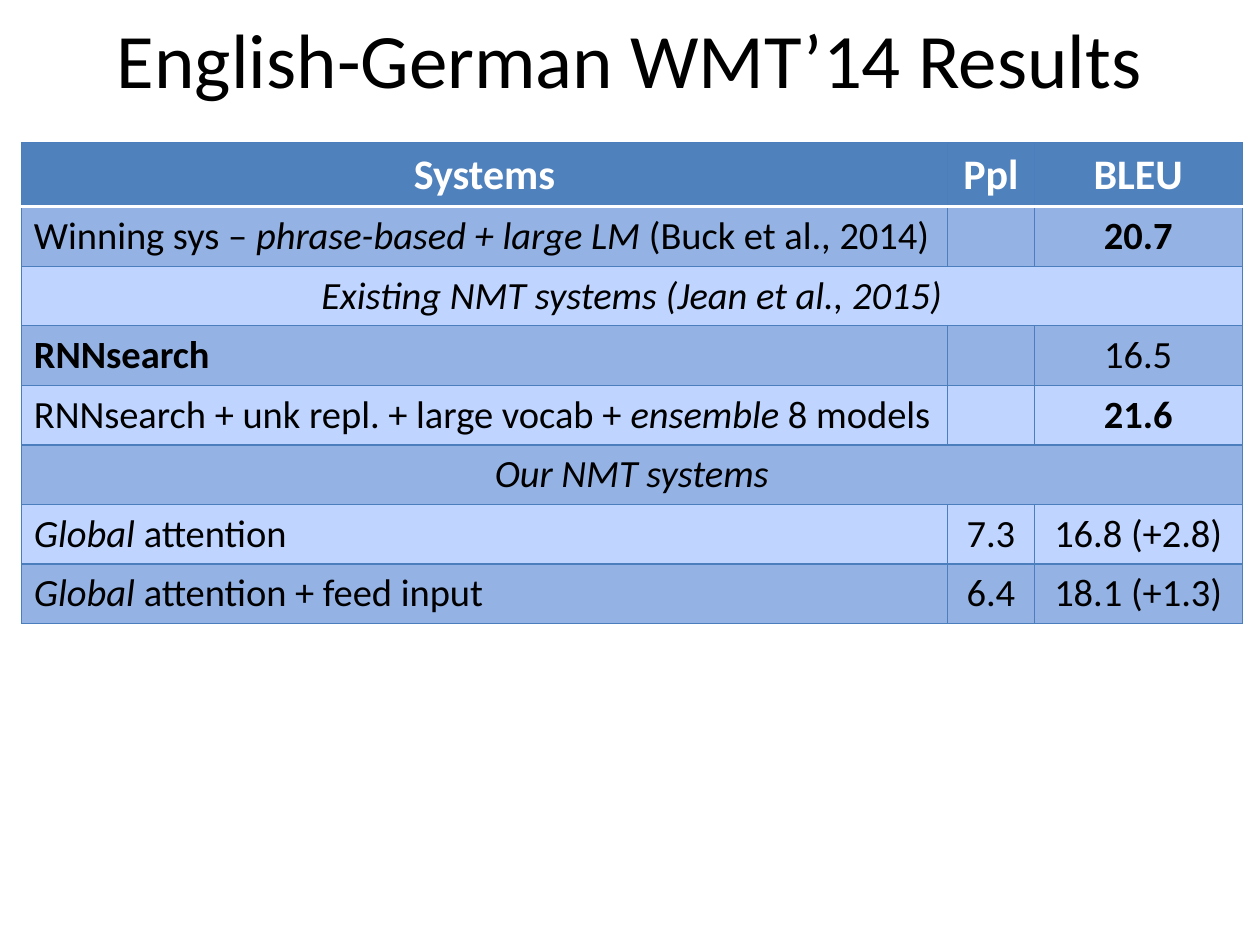
from lxml.etree import SubElement
from pptx import Presentation
from pptx.dml.color import RGBColor
from pptx.enum.text import MSO_ANCHOR as Anchor, PP_ALIGN as Align
from pptx.oxml.ns import qn
from pptx.util import Cm, Pt

TITLE = "English-German WMT’14 Results"
HEAD = ["Systems", "Ppl", "BLEU"]
# Each cell is a list of (text, style) runs: b bold, i italic.
# A row with a single cell spans the whole table.
ROWS = [
    [[("Winning sys – ", ""), ("phrase-based + large LM ", "i"),
      ("(Buck et al., 2014)", "")], [], [("20.7", "b")]],
    [[("Existing NMT systems (Jean et al., 2015)", "i")]],
    [[("RNNsearch", "b")], [], [("16.5", "")]],
    [[("RNNsearch + unk repl. + large vocab + ", ""), ("ensemble", "i"),
      (" 8 models", "")], [], [("21.6", "b")]],
    [[("Our NMT systems", "i")]],
    [[("Global ", "i"), ("attention", "")], [("7.3", "")],
     [("16.8 (+2.8)", "")]],
    [[("Global ", "i"), ("attention + feed input", "")], [("6.4", "")],
     [("18.1 (+1.3)", "")]],
]
WIDTHS = [18.67, 1.75, 4.19]
HEAD_H, ROW_H = 1.29, 1.2
FONT = "Calibri"
BLUE, DARK, LIGHT, EDGE = "4F81BD", "94B2E4", "BFD5FF", "4B7EBC"
BLACK, WHITE = "000000", "FFFFFF"


def color(code):
    return RGBColor.from_string(code)


def write(para, runs, size, ink, align):
    for text, style in runs:
        run = para.add_run()
        run.text = text
        if "b" in style:
            run.font.bold = True
        if "i" in style:
            run.font.italic = True
    font = para.font
    font.name, font.size = FONT, Pt(size)
    font.color.rgb = color(ink)
    font.bold = False
    para.alignment = align


def edge(cell, side, code, width):
    """Draw one border of a cell; call before the cell is filled."""
    line = SubElement(cell._tc.get_or_add_tcPr(), qn("a:ln" + side),
                      w=str(Pt(width)))
    SubElement(SubElement(line, qn("a:solidFill")), qn("a:srgbClr"), val=code)


def paint(cell, row):
    for side in "LRTB":
        rule = (row, side) in ((0, "B"), (1, "T"))
        edge(cell, side, *((WHITE, 2) if rule else (EDGE, 0.75)))
    cell.fill.solid()
    cell.fill.fore_color.rgb = color(
        BLUE if row == 0 else DARK if row % 2 else LIGHT)


deck = Presentation()
deck.slide_width, deck.slide_height = Cm(25.4), Cm(19.05)
slide = deck.slides.add_slide(deck.slide_layouts[6])

box = slide.shapes.add_textbox(Cm(1.27), Cm(-0.43), Cm(22.86), Cm(3.18))
frame = box.text_frame
frame.word_wrap = True
frame.vertical_anchor = Anchor.MIDDLE
write(frame.paragraphs[0], [(TITLE, "")], 44, BLACK, Align.CENTER)

table = slide.shapes.add_table(
    len(ROWS) + 1, len(WIDTHS), Cm(0.43), Cm(2.88),
    Cm(sum(WIDTHS)), Cm(HEAD_H + ROW_H * len(ROWS))).table
for col, width in zip(table.columns, WIDTHS):
    col.width = Cm(width)

lines = [[[(name, "b")] for name in HEAD]] + ROWS
for r, line in enumerate(lines):
    table.rows[r].height = Cm(ROW_H if r else HEAD_H)
    for c in range(len(WIDTHS)):
        paint(table.cell(r, c), r)
    if len(line) == 1:
        table.cell(r, 0).merge(table.cell(r, len(WIDTHS) - 1))
    for c, runs in enumerate(line):
        cell = table.cell(r, c)
        cell.vertical_anchor = Anchor.TOP if r else Anchor.MIDDLE
        left = r and c == 0 and len(line) > 1
        write(cell.text_frame.paragraphs[0], runs, 22 if r else 24,
              BLACK if r else WHITE, Align.LEFT if left else Align.CENTER)

deck.save("out.pptx")
